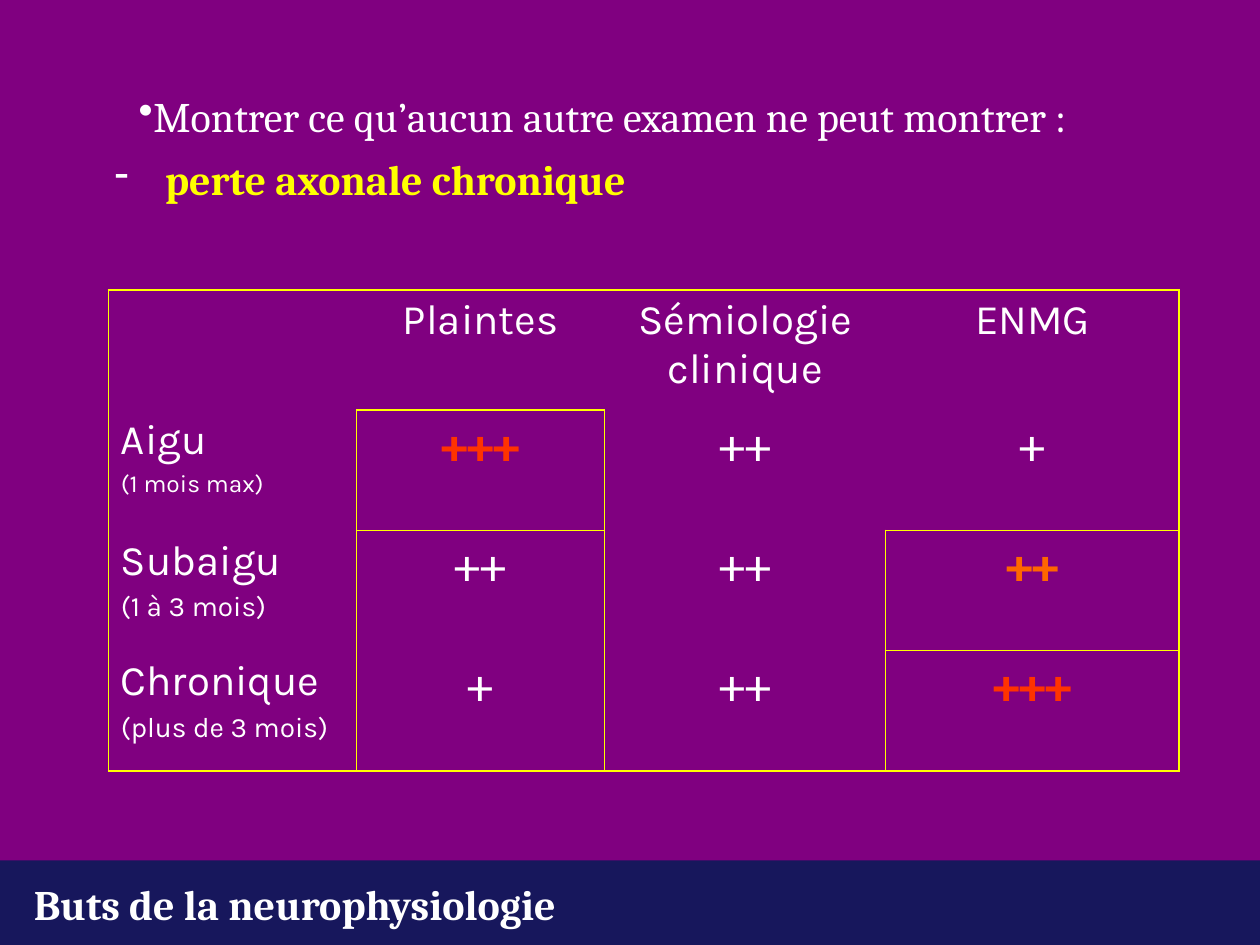
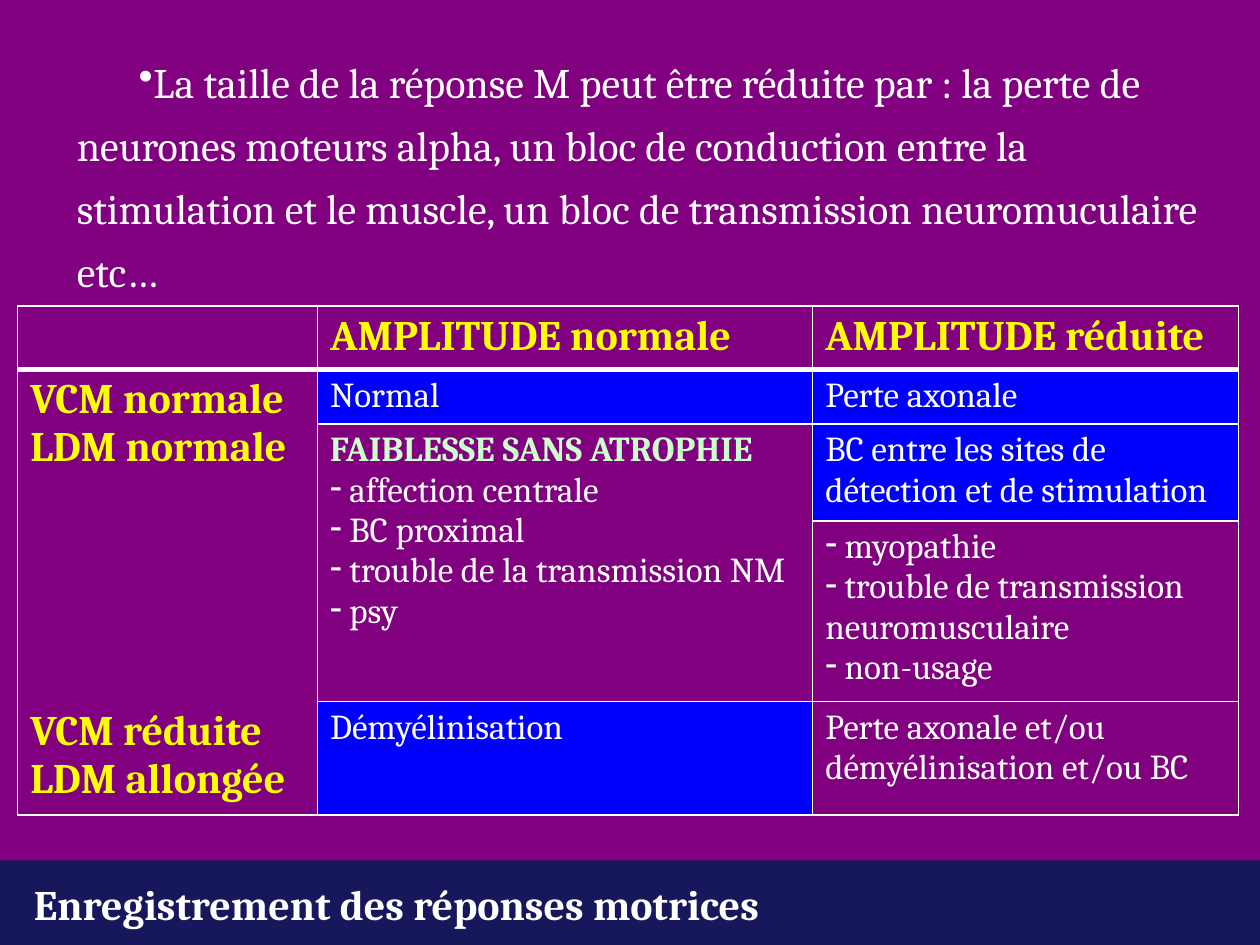
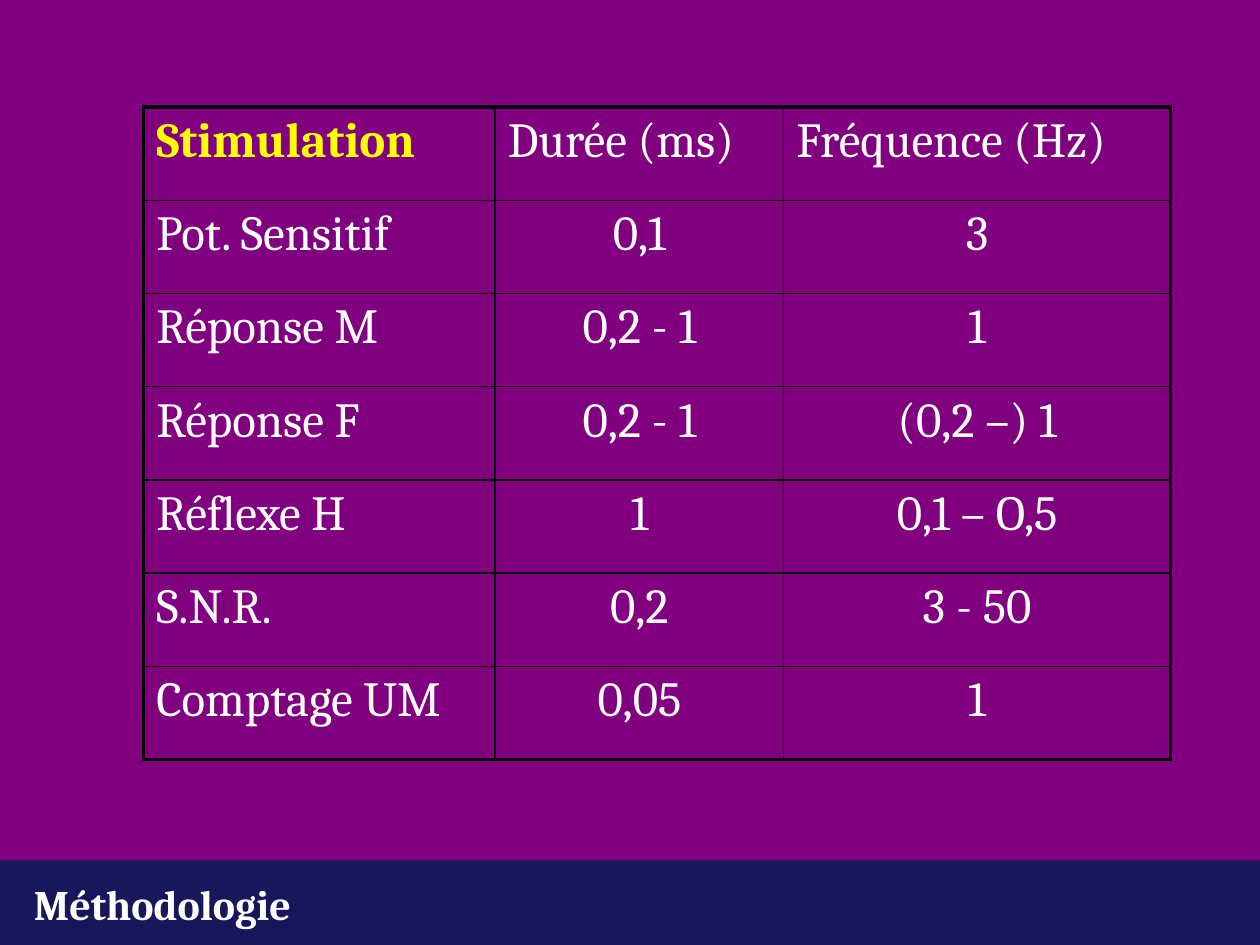
"""Build three neurophysiology slides: a band, a footer title, bullets and bordered tables."""
from lxml import etree
from pptx import Presentation
from pptx import util as u
from pptx.dml import color
from pptx.enum import shapes, text
from pptx.oxml import ns

COLORS = {
    "navy": "17175C", "purple": "800080", "white": "FFFFFF", "yellow": "FFFF00",
    "red": "FF3300", "orange": "FF6600", "blue": "0000FF", "mint": "CCFFCC", "black": "000000",
}
SIDES = {"left": "a:lnL", "right": "a:lnR", "top": "a:lnT", "bottom": "a:lnB"}


def rgb(name):
    return color.RGBColor.from_string(COLORS[name])


def add_solid(parent, name):
    fill = etree.SubElement(parent, ns.qn("a:solidFill"))
    etree.SubElement(fill, ns.qn("a:srgbClr"), val=COLORS[name])


class Deck:
    """Holds the shared style and the current slide."""
    font = "Cambria"

    def __init__(self):
        self.prs = Presentation()
        self.prs.slide_width, self.prs.slide_height = u.Inches(10), u.Inches(7.5)

    def slide(self, title):
        self.s = self.prs.slides.add_slide(self.prs.slide_layouts[6])
        fill = self.s.background.fill
        fill.solid()
        fill.fore_color.rgb = rgb("navy")
        self.band(0, 0, 10, 6.83)
        self.line(self.box(0.17, 6.92, 7.72, 0.5).paragraphs[0], title, bold=True)

    def band(self, *at):
        sp = self.s.shapes.add_shape(shapes.MSO_SHAPE.RECTANGLE, *map(u.Inches, at))
        sp.shadow.inherit = False
        sp.fill.solid()
        sp.fill.fore_color.rgb = rgb("purple")
        sp.line.fill.background()

    def box(self, *at):
        tf = self.s.shapes.add_textbox(*map(u.Inches, at)).text_frame
        tf.word_wrap = True
        return tf

    def line(self, p, words, size=24, ink="white", bold=False, font=None):
        p.text = words
        for r in p.runs:
            r.font.size, r.font.bold = u.Pt(size), bold
            r.font.name = font or self.font
            r.font.color.rgb = rgb(ink)

    def bullet(self, p, char, left=0, indent=0):
        pPr = p._p.get_or_add_pPr()
        pPr.set("marL", str(u.Inches(left)))
        pPr.set("indent", str(u.Inches(indent)))
        add_solid(etree.SubElement(pPr, ns.qn("a:buClr")), "white")
        clr = pPr.find(ns.qn("a:buClr"))
        clr.append(clr[0][0])
        clr.remove(clr[0])
        etree.SubElement(pPr, ns.qn("a:buChar"), char=char)

    def bullets(self, top, height, main, sub=None):
        tf = self.box(0.27, top, 9.73, height)
        tf.margin_left = tf.margin_right = u.Inches(0.34)
        p = tf.paragraphs[0]
        p.line_spacing = 1.25
        self.line(p, main)
        self.bullet(p, "•", 0, 0.49)
        if sub:
            p = tf.add_paragraph()
            p.line_spacing = 1.25
            self.line(p, sub, ink="yellow", bold=True)
            self.bullet(p, "-", 0.7, -0.4)

    def table(self, left, top, widths, heights):
        at = left, top, sum(widths), sum(heights)
        tbl = self.s.shapes.add_table(len(heights), len(widths), *map(u.Inches, at)).table
        tbl.first_row = tbl.horz_banding = False
        for col, width in zip(tbl.columns, widths):
            col.width = u.Inches(width)
        for row, height in zip(tbl.rows, heights):
            row.height = u.Inches(height)
        self.tbl, self.borders = tbl, {}

    def cell(self, row, col, lines, fill="purple", center=False, font=None):
        c = self.tbl.cell(row, col)
        c.fill.solid()
        c.fill.fore_color.rgb = rgb(fill)
        for i, (words, *style) in enumerate(lines):
            p = c.text_frame.add_paragraph() if i else c.text_frame.paragraphs[0]
            if words.startswith("- "):
                words = words[1:]
                self.bullet(p, "-")
            self.line(p, words, *style, font=font)
            if center:
                p.alignment = text.PP_ALIGN.CENTER
            if i and font:
                p.space_before = u.Pt(round(0.2 * style[0], 1))

    def frame(self, r0, c0, r1, c1, ink, width=1, sides=SIDES):
        pen = ink, width
        for row in range(r0, r1 + 1):
            for col, here, there, step in ((c0, "left", "right", -1), (c1, "right", "left", 1)):
                if here in sides:
                    self.borders[row, col, here] = self.borders[row, col + step, there] = pen
        for col in range(c0, c1 + 1):
            for row, here, there, step in ((r0, "top", "bottom", -1), (r1, "bottom", "top", 1)):
                if here in sides:
                    self.borders[row, col, here] = self.borders[row + step, col, there] = pen

    def draw_borders(self):
        for row in range(len(self.tbl.rows)):
            for col in range(len(self.tbl.columns)):
                tcPr = self.tbl.cell(row, col)._tc.get_or_add_tcPr()
                for i, (side, tag) in enumerate(SIDES.items()):
                    ln = etree.Element(ns.qn(tag))
                    pen = self.borders.get((row, col, side))
                    if pen:
                        ln.set("w", str(u.Pt(pen[1])))
                        add_solid(ln, pen[0])
                    else:
                        etree.SubElement(ln, ns.qn("a:noFill"))
                    tcPr.insert(i, ln)


def goals(deck):
    deck.slide("Buts de la neurophysiologie")
    deck.bullets(0.57, 1.06, "Montrer ce qu’aucun autre examen ne peut montrer :", "perte axonale chronique")
    deck.table(0.86, 2.3, [1.97, 1.97, 2.23, 2.33], [0.955] * 4)
    for col, head in enumerate(["", "Plaintes", "Sémiologie clinique", "ENMG"]):
        deck.cell(0, col, [(head, 24)], center=True, font="Karla")
    rows = [
        (("Aigu", "(1 mois max)", 14), ("+++", "++", "+")),
        (("Subaigu", "(1 à 3 mois)", 16), ("++", "++", "++")),
        (("Chronique", "(plus de 3 mois)", 16), ("+", "++", "+++")),
    ]
    accents = {(1, 1): "red", (2, 3): "orange", (3, 3): "red"}
    for row, ((stage, span, size), marks) in enumerate(rows, 1):
        deck.cell(row, 0, [(stage, 24), (span, size)], font="Karla")
        for col, mark in enumerate(marks, 1):
            ink = accents.get((row, col))
            deck.cell(row, col, [(mark, 28, ink or "white", bool(ink))], center=True, font="Karla")
    for area in [(0, 0, 3, 3), (1, 1, 1, 1), (2, 1, 3, 1), (2, 3, 2, 3), (3, 3, 3, 3)]:
        deck.frame(*area, "yellow")
    deck.draw_borders()


def motor_responses(deck):
    deck.slide("Enregistrement des réponses motrices")
    deck.bullets(0.3, 1.95, "La taille de la réponse M peut être réduite par : la perte de neurones moteurs "
                 "alpha, un bloc de conduction entre la stimulation et le muscle, un bloc de "
                 "transmission neuromuculaire etc…")
    deck.table(0.14, 2.43, [2.38, 3.93, 3.38], [0.5, 0.43, 0.77, 1.43, 0.9])
    head = 24, "yellow", True
    weak = [("FAIBLESSE SANS ATROPHIE", 20, "mint", True)]
    weak += [(words, 20) for words in
             ("- affection centrale", "- BC proximal", "- trouble de la transmission NM", "- psy")]
    muscle = [(words, 20) for words in
              ("- myopathie", "- trouble de transmission neuromusculaire", "- non-usage")]
    cells = [
        ((0, 0, 0, 0), [], "purple"),
        ((0, 1, 0, 1), [("AMPLITUDE normale", *head)], "purple"),
        ((0, 2, 0, 2), [("AMPLITUDE réduite", *head)], "purple"),
        ((1, 0, 3, 0), [("VCM normale", *head), ("LDM normale", *head)], "purple"),
        ((1, 1, 1, 1), [("Normal", 20)], "blue"),
        ((1, 2, 1, 2), [("Perte axonale", 20)], "blue"),
        ((2, 1, 3, 1), weak, "purple"),
        ((2, 2, 2, 2), [("BC entre les sites de détection et de stimulation", 20)], "blue"),
        ((3, 2, 3, 2), muscle, "purple"),
        ((4, 0, 4, 0), [("VCM réduite", *head), ("LDM allongée", *head)], "purple"),
        ((4, 1, 4, 1), [("Démyélinisation", 20)], "blue"),
        ((4, 2, 4, 2), [("Perte axonale et/ou démyélinisation et/ou BC", 20)], "purple"),
    ]
    for (r0, c0, r1, c1), lines, fill in cells:
        if r1 > r0:
            deck.tbl.cell(r0, c0).merge(deck.tbl.cell(r1, c1))
        deck.cell(r0, c0, lines, fill)
        deck.frame(r0, c0, r1, c1, "white")
    deck.frame(0, 0, 0, 2, "white", 3, ["bottom"])
    deck.draw_borders()


def methods(deck):
    deck.slide("Méthodologie")
    rows = [
        ("Stimulation", "Durée (ms)", "Fréquence (Hz)"),
        ("Pot. Sensitif", "0,1", "3"),
        ("Réponse M", "0,2 - 1", "1"),
        ("Réponse F", "0,2 - 1", "(0,2 –) 1"),
        ("Réflexe H", "1", "0,1 – O,5"),
        ("S.N.R.", "0,2", "3 - 50"),
        ("Comptage UM", "0,05", "1"),
    ]
    deck.table(1.14, 0.85, [2.79, 2.29, 3.07], [0.74] * len(rows))
    for row, values in enumerate(rows):
        for col, value in enumerate(values):
            corner = row == col == 0
            style = (28, "yellow", True) if corner else (28,)
            deck.cell(row, col, [(value, *style)], center=row > 0 and col > 0)
            deck.frame(row, col, row, col, "black")
    deck.frame(0, 0, len(rows) - 1, 2, "black", 2.25)
    deck.draw_borders()


def main():
    deck = Deck()
    goals(deck)
    motor_responses(deck)
    methods(deck)
    deck.prs.save("out.pptx")


if __name__ == "__main__":
    main()
